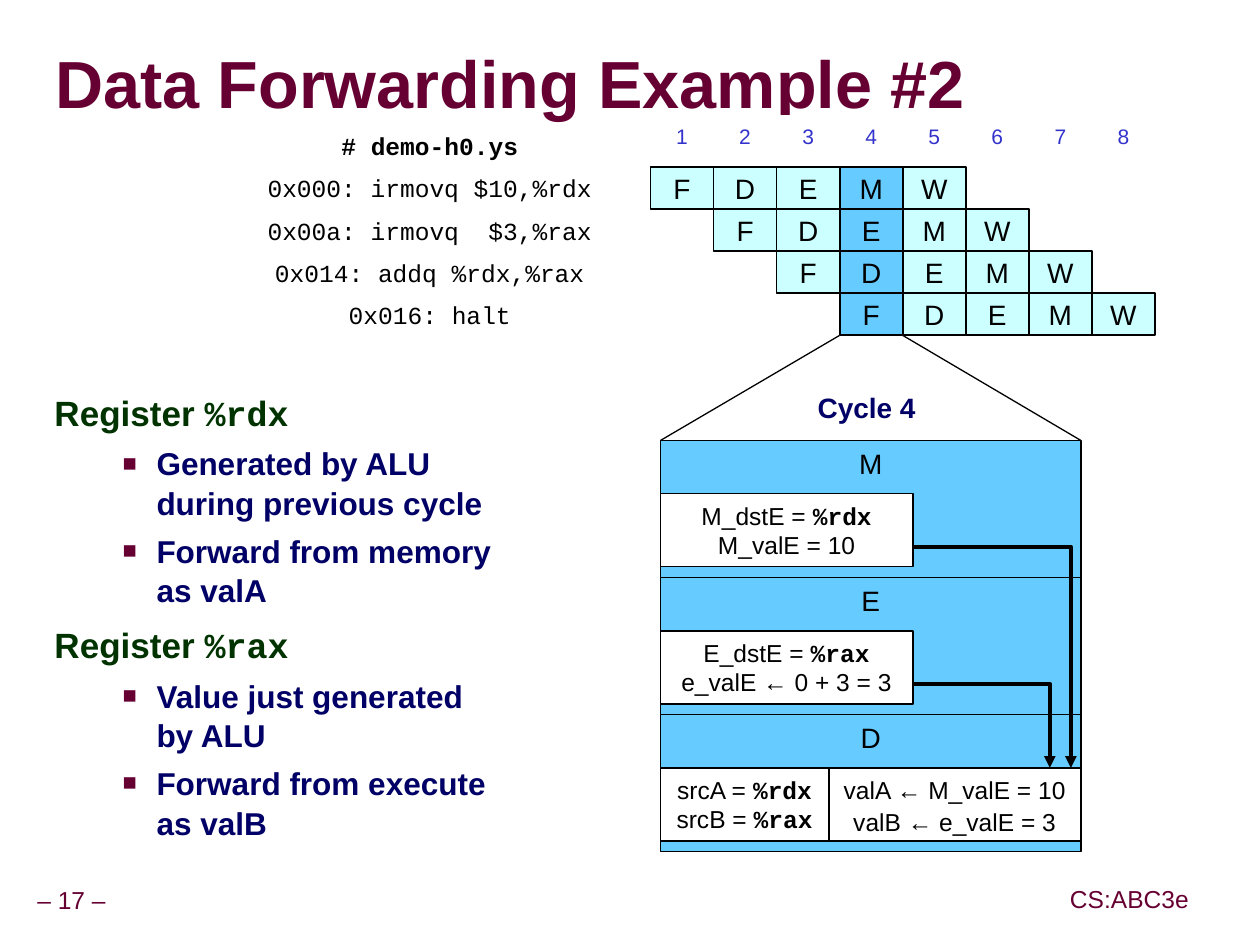
import pptx
import pptx.util
import pptx.dml.color
import pptx.enum.shapes
import pptx.enum.text
import pptx.oxml
import pptx.oxml.ns

RGBColor = pptx.dml.color.RGBColor
MAROON = RGBColor(0x66, 0x00, 0x33)
GREEN = RGBColor(0x00, 0x33, 0x00)
NAVY = RGBColor(0x00, 0x00, 0x66)
BLUE = RGBColor(0x33, 0x33, 0xCC)
BLACK = RGBColor(0, 0, 0)
WHITE = RGBColor(0xFF, 0xFF, 0xFF)
PALE = RGBColor(0xCC, 0xFF, 0xFF)
SKY = RGBColor(0x66, 0xCC, 0xFF)
SANS, MONO = "Arial", "Courier New"

TITLE = "Data Forwarding Example #2"
FOOTERS = [("– 17 –", 30, 881, 83), ("CS:ABC3e", 1063, 880, 131)]
CODE = [
    "# demo-h0.ys",
    "0x000: irmovq $10,%rdx",
    "0x00a: irmovq  $3,%rax",
    "0x014: addq %rdx,%rax",
    "0x016: halt",
]
PIPELINE = "FDEMW"
CYCLES, FOCUS = 8, 4
NOTES = [
    (("Register ", "%rdx"), ["Generated by ALU during previous cycle", "Forward from memory as valA"]),
    (("Register ", "%rax"), ["Value just generated by ALU", "Forward from execute as valB"]),
]
STAGES = [
    ("M", [(0, 252, 1.0, [("M_dstE = ", "%rdx"), ("M_valE = 10",)])]),
    ("E", [(0, 252, 1.0, [("E_dstE = ", "%rax"), ("e_valE ← 0 + 3 = 3",)])]),
    ("D", [(168, 252, 1.1, [("valA ← M_valE = 10",), ("valB ← e_valE = 3",)]),
           (0, 168, 1.0, [("srcA = ", "%rdx"), ("srcB = ", "%rax")])]),
]
ARROWS = [(0, 1070), (1, 1049)]

GRID_X, GRID_Y, COL, ROW = 650, 167, 63, 42
CODE_X, CODE_Y, CODE_W = 251, 125, 357
PANEL_X, PANEL_Y, PANEL_W, STAGE_H = 660, 440, 420, 137
BOX_DY, BOX_H, ARROW_DY, ARROW_X = 53, 73, 106, 912


def px(n):
    return pptx.util.Emu(n * 7257)


def sub(parent, tag, **attrs):
    el = pptx.oxml.parse_xml(f"<{tag} {pptx.oxml.ns.nsdecls('a')}/>")
    for name, value in attrs.items():
        el.set(name, str(value))
    parent.append(el)
    return el


def write(p, runs, size, color=BLACK, font=SANS, bold=False, spacing=1.0, before=0,
          align=pptx.enum.text.PP_ALIGN.CENTER):
    p.alignment, p.line_spacing = align, spacing
    p.space_before = pptx.util.Pt(before)
    for text in runs:
        r = p.add_run()
        r.text = text
        register = text.startswith("%")
        r.font.name = MONO if register else font
        r.font.bold = bold or register
        r.font.size = pptx.util.Pt(size)
        r.font.color.rgb = color


def fill_text(sp, paragraphs, anchor="MIDDLE", wrap=False, inset=None, **fmt):
    tf = sp.text_frame
    tf.word_wrap = wrap
    tf.vertical_anchor = getattr(pptx.enum.text.MSO_ANCHOR, anchor)
    if inset is not None:
        tf.margin_left = tf.margin_right = tf.margin_top = tf.margin_bottom = px(inset)
    for i, runs in enumerate(paragraphs):
        write(tf.add_paragraph() if i else tf.paragraphs[0], runs, **fmt)


def box(s, x, y, w, h, paragraphs, fill=WHITE, line=None, **fmt):
    sp = s.shapes.add_shape(pptx.enum.shapes.MSO_SHAPE.RECTANGLE, px(x), px(y), px(w), px(h))
    sp.shadow.inherit = False
    sp.fill.solid()
    sp.fill.fore_color.rgb = fill
    if line:
        sp.line.color.rgb = BLACK
        sp.line.width = pptx.util.Pt(line)
    else:
        sp.line.fill.background()
    fill_text(sp, paragraphs, **fmt)


def label(s, x, y, w, h, text, **fmt):
    sp = s.shapes.add_textbox(px(x), px(y), px(w), px(h))
    fill_text(sp, [(text,)], **fmt)
    return sp


def hang(p, left, first, bullet=False):
    ppr = p._p.get_or_add_pPr()
    ppr.set("marL", str(px(left)))
    ppr.set("indent", str(px(first)))
    if bullet:
        sub(sub(ppr, "a:buClr"), "a:srgbClr", val=MAROON)
        sub(ppr, "a:buSzPct", val=75000)
        sub(ppr, "a:buFont", typeface=SANS)
        sub(ppr, "a:buChar", char="■")


def draw_title(s):
    sp = label(s, 55, 34, 1200, 107, TITLE, wrap=True, inset=0, size=38, color=MAROON,
               bold=True, spacing=0.87, align=pptx.enum.text.PP_ALIGN.LEFT)
    rpr = sp.text_frame.paragraphs[0].runs[0].font._element
    effects = sub(rpr, "a:effectLst")
    shadow = sub(effects, "a:outerShdw", dist=px(5), dir=2700000)
    sub(shadow, "a:srgbClr", val="969696")
    rpr.find(pptx.oxml.ns.qn("a:solidFill")).addnext(effects)


def draw_notes(s):
    sp = s.shapes.add_textbox(px(42), px(388), px(475), px(466))
    tf = sp.text_frame
    tf.word_wrap = True
    left = pptx.enum.text.PP_ALIGN.LEFT
    for i, (heading, bullets) in enumerate(NOTES):
        p = tf.add_paragraph() if i else tf.paragraphs[0]
        write(p, heading, 20, GREEN, bold=True, spacing=0.95, before=10 if i else 0, align=left)
        hang(p, 53, -53)
        for text in bullets:
            p = tf.add_paragraph()
            write(p, (text,), 18, NAVY, bold=True, spacing=1.05, before=4.5, align=left)
            hang(p, 102, -34, bullet=True)


def draw_pipeline(s):
    for i, text in enumerate(CODE):
        box(s, CODE_X, CODE_Y + i * ROW, CODE_W, ROW, [(text,)], size=14, font=MONO, bold=i == 0)
    for c in range(CYCLES):
        box(s, GRID_X + c * COL, 115, COL, ROW, [(str(c + 1),)], size=12, color=BLUE)
    for row in range(len(CODE) - 1):
        for c, stage in enumerate(PIPELINE, row):
            box(s, GRID_X + c * COL, GRID_Y + row * ROW, COL, ROW, [(stage,)],
                fill=SKY if c == FOCUS - 1 else PALE, line=1, size=16)


def draw_cycle(s):
    focus_x = GRID_X + (FOCUS - 1) * COL
    grid_bottom = GRID_Y + (len(CODE) - 1) * ROW
    for x1, x2 in [(focus_x, PANEL_X), (focus_x + COL, PANEL_X + PANEL_W)]:
        ln = s.shapes.add_connector(pptx.enum.shapes.MSO_CONNECTOR.STRAIGHT,
                                    px(x1), px(grid_bottom), px(x2), px(PANEL_Y))
        ln.line.color.rgb = BLACK
        ln.line.width = pptx.util.Pt(0.75)
        sub(ln._element.spPr, "a:effectLst")
    label(s, 735, 388, 262, 47, f"Cycle {FOCUS}", anchor="TOP", wrap=True,
          size=16, color=NAVY, bold=True, spacing=0.9)
    for i, (name, values) in enumerate(STAGES):
        y = PANEL_Y + i * STAGE_H
        box(s, PANEL_X, y, PANEL_W, STAGE_H, [(name,)], fill=SKY, line=0.75, anchor="TOP", size=16)
        for dx, w, spacing, lines in values:
            box(s, PANEL_X + dx, y + BOX_DY, w, BOX_H, lines, line=1, size=14, spacing=spacing)
    target_y = PANEL_Y + (len(STAGES) - 1) * STAGE_H + BOX_DY
    for stage, x in ARROWS:
        y = PANEL_Y + stage * STAGE_H + ARROW_DY
        fb = s.shapes.build_freeform(px(ARROW_X), px(y))
        fb.add_line_segments([(px(x), px(y)), (px(x), px(target_y))], close=False)
        sp = fb.convert_to_shape()
        sp.shadow.inherit = False
        sp.fill.background()
        sp.line.color.rgb = BLACK
        sp.line.width = pptx.util.Pt(2.25)
        sub(sp.line._get_or_add_ln(), "a:tailEnd", type="triangle")


def main():
    prs = pptx.Presentation()
    prs.slide_width, prs.slide_height = px(1259), px(944)
    s = prs.slides.add_slide(prs.slide_layouts[6])
    for text, x, y, w in FOOTERS:
        label(s, x, y, w, 40, text, inset=6, size=14, color=MAROON, spacing=0.9)
    draw_title(s)
    draw_notes(s)
    draw_pipeline(s)
    draw_cycle(s)
    prs.save("out.pptx")


if __name__ == "__main__":
    main()
